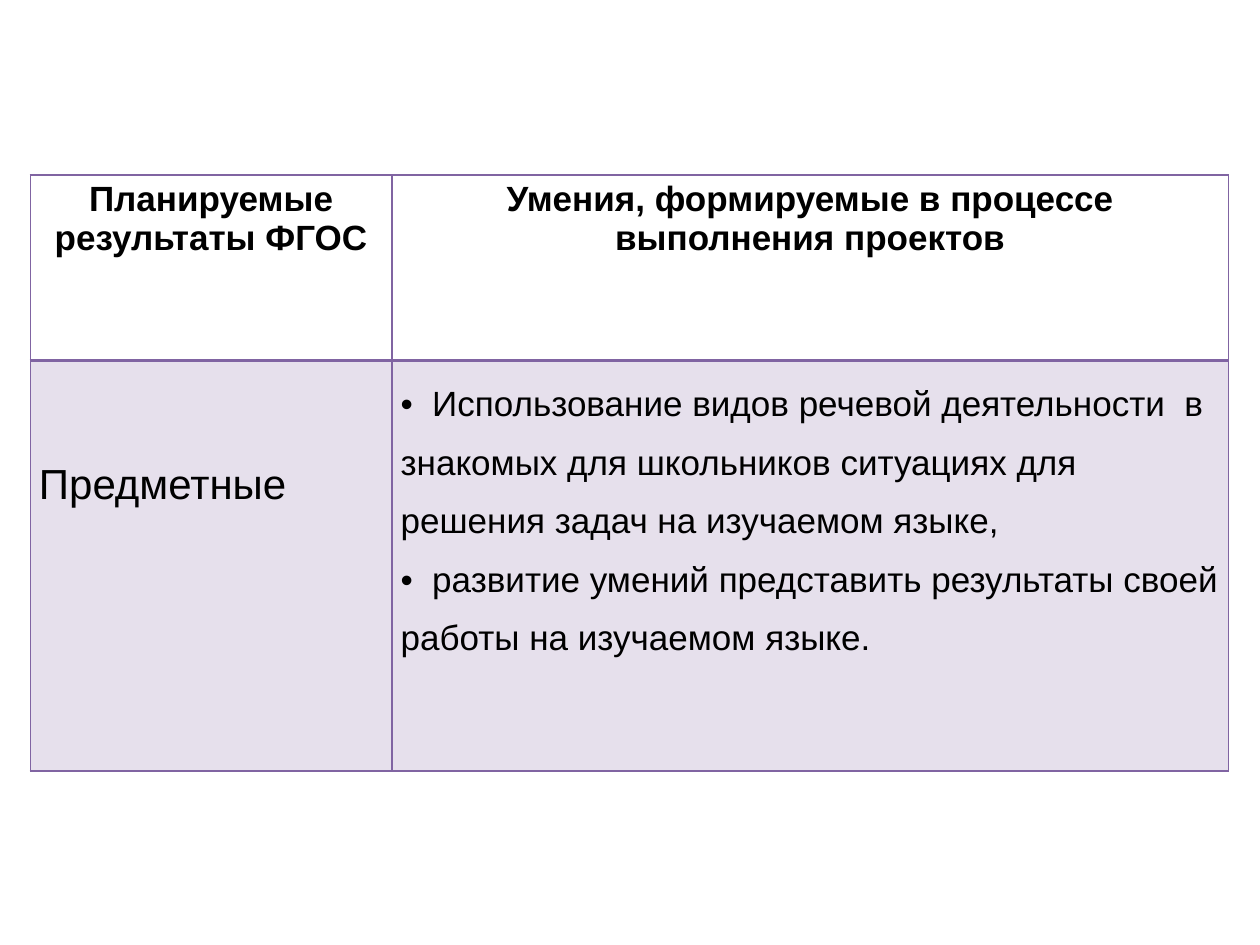
from lxml import etree
from pptx import Presentation
from pptx import util as u
from pptx.dml.color import RGBColor
from pptx.enum import text
from pptx.oxml.ns import qn

PURPLE, LILAC, BLACK = "8064A2", "E6E0EC", "000000"
COLS = [206.7, 478]
ROWS = [105.8, 234.8]
HEADERS = ["Планируемые результаты ФГОС",
           "Умения, формируемые в процессе выполнения проектов"]
SKILLS = [
    "Использование видов речевой деятельности  в знакомых для школьников "
    "ситуациях для решения задач на изучаемом языке,",
    "развитие умений представить результаты своей работы на изучаемом языке.",
]


def rgb(color):
    return RGBColor.from_string(color)


def sub(parent, tag, **attrs):
    return etree.SubElement(parent, qn(tag), attrs)


def border_cell(cell, widths):
    """Draw the left, right, top and bottom lines of a cell."""
    tcPr = cell._tc.get_or_add_tcPr()
    for side, width in widths.items():
        ln = sub(tcPr, f"a:ln{side}", w=str(int(u.Pt(width))))
        sub(sub(ln, "a:solidFill"), "a:srgbClr", val=PURPLE)


def bullet(p):
    """Bullet with a tabbed first line; wrapped lines start at the margin."""
    pPr = p._p.get_or_add_pPr()
    pPr.set("marL", "0")
    pPr.set("indent", "0")
    sub(pPr, "a:buFont", typeface="Arial")
    sub(pPr, "a:buChar", char="•")
    sub(sub(pPr, "a:tabLst"), "a:tab", pos=str(int(u.Pt(18))), algn="l")
    p.line_spacing = 1.5


def fill_cell(cell, lines, size, bold=False, align=text.PP_ALIGN.LEFT,
              top=3, bullets=False):
    margins = dict(margin_left=5, margin_right=5, margin_top=top, margin_bottom=3)
    for name, value in margins.items():
        setattr(cell, name, u.Pt(value))
    tf = cell.text_frame
    for i, line in enumerate(lines):
        p = tf.add_paragraph() if i else tf.paragraphs[0]
        if bullets:
            bullet(p)
        p.alignment = align
        r = p.add_run()
        r.text = "\t" + line if bullets else line
        for name, value in dict(name="Arial", size=u.Pt(size), bold=bold).items():
            setattr(r.font, name, value)
        r.font.color.rgb = rgb(BLACK)


def add_results_table(s):
    frame = s.shapes.add_table(len(ROWS), len(COLS), u.Pt(17.3), u.Pt(100),
                               u.Pt(sum(COLS)), u.Pt(sum(ROWS)))
    table = frame.table
    table.first_row = table.horz_banding = False
    for col, width in zip(table.columns, COLS):
        col.width = u.Pt(width)
    for row, height in zip(table.rows, ROWS):
        row.height = u.Pt(height)

    # Header row: no fill, heavier line below
    for i, header in enumerate(HEADERS):
        cell = table.cell(0, i)
        border_cell(cell, dict(L=1, R=1, T=1, B=2))
        cell.fill.background()
        fill_cell(cell, [header], 20, bold=True, align=text.PP_ALIGN.CENTER)

    # Body row: tinted
    for i in range(len(COLS)):
        cell = table.cell(1, i)
        border_cell(cell, dict(L=1, R=1, T=2, B=1))
        cell.fill.solid()
        cell.fill.fore_color.rgb = rgb(LILAC)
    fill_cell(table.cell(1, 0), ["Предметные"], 24, top=58)
    fill_cell(table.cell(1, 1), SKILLS, 20, bullets=True)


def main():
    prs = Presentation()
    prs.slide_width, prs.slide_height = u.Pt(720), u.Pt(540)
    s = prs.slides.add_slide(prs.slide_layouts[6])
    add_results_table(s)
    prs.save("out.pptx")


if __name__ == "__main__":
    main()
